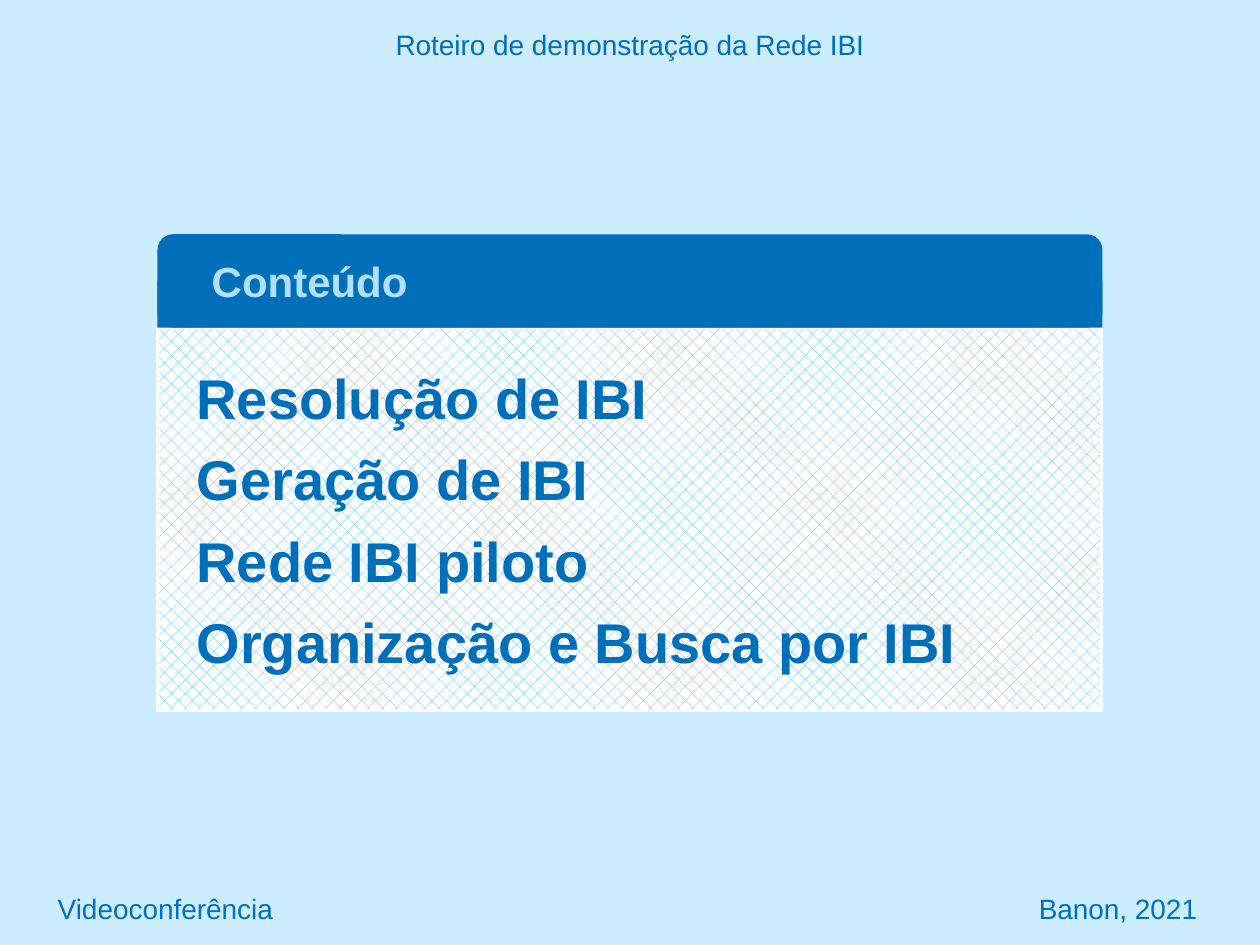
from pptx import Presentation
from pptx.dml.color import RGBColor
from pptx.enum import dml, shapes, text
from pptx.util import Inches, Pt

FONT = "Arial"
SKY = RGBColor(0xCC, 0xEC, 0xFF)
BLUE = RGBColor(0x00, 0x6F, 0xBA)
FOOTER_BLUE = RGBColor(0x00, 0x70, 0xC0)
PALE_BLUE = RGBColor(0xB0, 0xE0, 0xFE)
HATCH_BLUE = RGBColor(0x3B, 0xB1, 0xFF)
WHITE = RGBColor(0xFF, 0xFF, 0xFF)

TOPICS = [
    "Resolução de IBI",
    "Geração de IBI",
    "Rede IBI piloto",
    "Organização e Busca por IBI",
]


def place(shape, left, top, width, height):
    shape.left, shape.top = Inches(left), Inches(top)
    shape.width, shape.height = Inches(width), Inches(height)


def write(shape, lines, size, color, bold=False,
          align=text.PP_ALIGN.LEFT, gap=0):
    """Fill a shape with one vertically centred paragraph per line."""
    frame = shape.text_frame
    frame.word_wrap = True
    frame.auto_size = text.MSO_AUTO_SIZE.NONE
    frame.vertical_anchor = text.MSO_ANCHOR.MIDDLE
    for number, line in enumerate(lines):
        para = frame.paragraphs[0] if number == 0 else frame.add_paragraph()
        para.alignment = align
        para.space_before = Pt(gap)
        span = para.add_run()
        span.text = line
        span.font.name = FONT
        span.font.size = Pt(size)
        span.font.bold = bold
        span.font.color.rgb = color


def add_label(page, bounds, line, color, align):
    box = page.shapes.add_textbox(*map(Inches, bounds))
    write(box, [line], 16, color, align=align)


def add_block(page, kind, bounds):
    block = page.shapes.add_shape(kind, *map(Inches, bounds))
    block.shadow.inherit = False
    block.fill.solid()
    block.fill.fore_color.rgb = BLUE
    block.line.fill.background()
    return block


def add_topics(page):
    panel = add_block(page, shapes.MSO_SHAPE.RECTANGLE, (1.25, 2.6, 7.49, 3.04))
    panel.fill.patterned()
    panel.fill.pattern = dml.MSO_PATTERN.PERCENT_25
    panel.fill.fore_color.rgb = HATCH_BLUE
    panel.fill.back_color.rgb = WHITE
    panel.line.color.rgb = WHITE
    panel.line.width = Pt(1.5)
    panel.text_frame.margin_left = Inches(0.31)
    write(panel, TOPICS, 32, BLUE, bold=True, gap=8)


def add_header(page):
    # The lower rectangle squares off the bottom corners of the header
    add_block(page, shapes.MSO_SHAPE.RECTANGLE, (1.25, 2.23, 7.5, 0.37))
    top = add_block(page, shapes.MSO_SHAPE.ROUNDED_RECTANGLE, (1.25, 1.86, 7.5, 0.74))
    top.adjustments[0] = 0.167

    # Bring the title in front of the header
    title = page.shapes.title
    place(title, 1.58, 1.95, 7, 0.56)
    write(title, ["Conteúdo"], 24, PALE_BLUE, bold=True)
    top._element.addnext(title._element)


def main():
    deck = Presentation()
    deck.slide_width, deck.slide_height = Inches(10), Inches(7.5)
    page = deck.slides.add_slide(deck.slide_layouts[5])
    page.background.fill.solid()
    page.background.fill.fore_color.rgb = SKY

    # Contents card
    add_topics(page)
    add_header(page)

    # Running head and footer
    add_label(page, (0, 0.17, 10, 0.37), "Roteiro de demonstração da Rede IBI",
              BLUE, text.PP_ALIGN.CENTER)
    add_label(page, (0.36, 7, 4, 0.42), "Videoconferência",
              FOOTER_BLUE, text.PP_ALIGN.LEFT)
    add_label(page, (5.6, 7, 4, 0.42), "Banon, 2021",
              FOOTER_BLUE, text.PP_ALIGN.RIGHT)

    deck.save("out.pptx")


if __name__ == "__main__":
    main()
